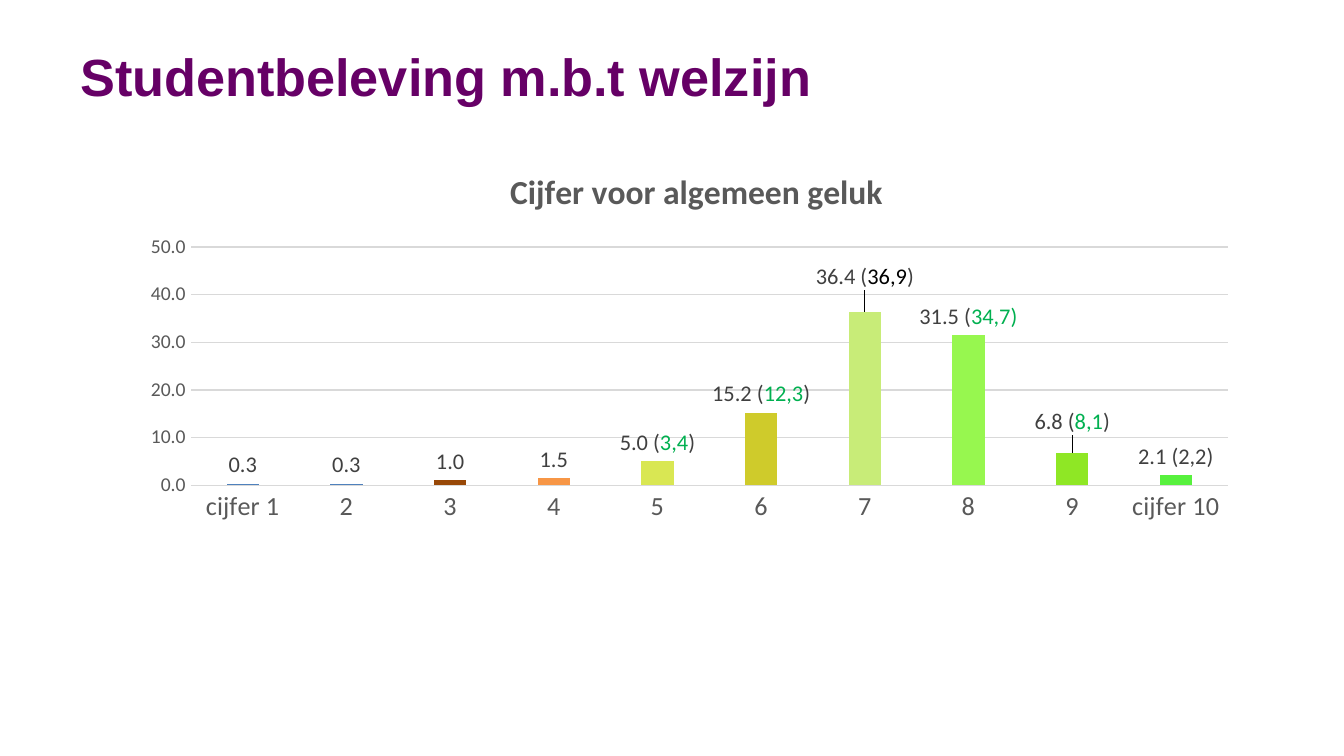
from dataclasses import dataclass
from typing import Any, Optional

from lxml import etree
from pptx import Presentation
from pptx import util as u
from pptx.chart import data as chart_data
from pptx.dml.color import RGBColor
from pptx.enum import chart as charts, text
from pptx.oxml.ns import qn


@dataclass(frozen=True)
class Theme:
    heading_font: str = "Arial"
    chart_font: str = "Calibri"
    purple: str = "660066"
    grey: str = "595959"
    dark: str = "404040"
    black: str = "000000"
    green: str = "00B050"
    grid: str = "D9D9D9"
    bar: str = "4F81BD"
    heading_size: float = 28
    chart_title_size: float = 18
    category_size: float = 14
    label_size: float = 12
    scale_size: float = 10.5
    base_size: float = 10


@dataclass(frozen=True)
class Grade:
    name: str
    share: float
    color: Optional[str] = None
    label: tuple[tuple[str, str], ...] = ()  # runs of (wording, colour)
    lift: float = 0  # upward shift as a fraction of the chart height


THEME = Theme()
DARK, GREEN = THEME.dark, THEME.green

GRADES = [
    Grade("cijfer 1", 0.3),
    Grade("2", 0.3),
    Grade("3", 1.0, "984807"),
    Grade("4", 1.5, "F79646"),
    Grade("5", 5.0, "D9E753", (("5.0 (", DARK), ("3,4", GREEN), (")", DARK))),
    Grade("6", 15.2, "CFCB2B", (("15.2 (", DARK), ("12,3", GREEN), (")", DARK))),
    Grade("7", 36.4, "C8EC78",
          (("36.4 (", DARK), ("36,9", THEME.black), (")", DARK)), 0.04),
    Grade("8", 31.5, "97F74F", (("31.5 (", DARK), ("34,7)", GREEN))),
    Grade("9", 6.8, "8FE725",
          (("6.8 (", DARK), ("8,1", GREEN), (")", DARK)), 0.03),
    Grade("cijfer 10", 2.1, "57F13D", (("2.1 (2,2)", DARK),)),
]


def apply(target: Any, values: dict[str, Any]) -> None:
    for name, value in values.items():
        setattr(target, name, value)


def style_font(font: Any, size: float, color: str,
               name: str = THEME.chart_font, bold: bool = False) -> None:
    apply(font, {"name": name, "size": u.Pt(size), "bold": bold})
    font.color.rgb = RGBColor.from_string(color)


def paint(fill: Any, color: str) -> None:
    fill.solid()
    fill.fore_color.rgb = RGBColor.from_string(color)


def draw_line(line: Any) -> None:
    line.width = u.Pt(0.75)
    paint(line.fill, THEME.grid)


def set_layout(parent: Any, index: int, values: dict[str, Any]) -> None:
    """Give a chart part a manual layout at its place in the XML order."""
    for old in parent.findall(qn("c:layout")):
        parent.remove(old)
    layout = etree.Element(qn("c:layout"))
    manual = etree.SubElement(layout, qn("c:manualLayout"))
    for name, value in values.items():
        etree.SubElement(manual, qn(f"c:{name}")).set("val", str(value))
    parent.insert(index, layout)


def add_heading(slide: Any, wording: str) -> None:
    box = slide.shapes.add_textbox(u.Pt(36), u.Pt(6.5), u.Pt(648), u.Pt(67.7))
    frame = box.text_frame
    apply(frame, {"word_wrap": True, "vertical_anchor": text.MSO_ANCHOR.MIDDLE})
    run = frame.paragraphs[0].add_run()
    run.text = wording
    style_font(run.font, THEME.heading_size, THEME.purple,
               THEME.heading_font, True)


def style_axes(chart: Any) -> None:
    no_tick = charts.XL_TICK_MARK.NONE
    ticks = {"major_tick_mark": no_tick, "minor_tick_mark": no_tick}
    grades, shares = chart.category_axis, chart.value_axis
    apply(grades, ticks | {"has_major_gridlines": False})
    apply(shares, ticks | {"minimum_scale": 0, "maximum_scale": 50,
                           "major_unit": 10, "has_major_gridlines": True})
    style_font(grades.tick_labels.font, THEME.category_size, THEME.grey)
    style_font(shares.tick_labels.font, THEME.scale_size, THEME.grey)
    apply(shares.tick_labels,
          {"number_format": "0.0", "number_format_is_linked": False})
    draw_line(grades.format.line)
    draw_line(shares.major_gridlines.format.line)
    shares.format.line.fill.background()


def style_grade(chart: Any, index: int, grade: Grade) -> None:
    point = chart.plots[0].series[0].points[index]
    if grade.color:
        paint(point.format.fill, grade.color)
    if not grade.label:
        return
    paragraph = point.data_label.text_frame.paragraphs[0]
    for wording, color in grade.label:
        run = paragraph.add_run()
        run.text = wording
        style_font(run.font, THEME.label_size, color)
    point.data_label.position = charts.XL_LABEL_POSITION.OUTSIDE_END
    if grade.lift:
        label = chart.element.xpath(f".//c:dLbl[c:idx/@val='{index}']")[0]
        set_layout(label, 1, {"x": 0, "y": -grade.lift})


def add_happiness_chart(slide: Any, grades: list[Grade]) -> None:
    shares = chart_data.CategoryChartData(number_format="0.0")
    shares.categories = [grade.name for grade in grades]
    shares.add_series("Series 1", [grade.share for grade in grades])
    chart = slide.shapes.add_chart(
        charts.XL_CHART_TYPE.COLUMN_CLUSTERED,
        u.Pt(63.4), u.Pt(76.3), u.Pt(607.7), u.Pt(214.6), shares).chart
    chart.has_legend = False
    style_font(chart.font, THEME.base_size, THEME.black)

    # Chart title
    chart.has_title = True
    run = chart.chart_title.text_frame.paragraphs[0].add_run()
    run.text = "Cijfer voor algemeen geluk"
    style_font(run.font, THEME.chart_title_size, THEME.grey, bold=True)
    set_layout(chart.element.xpath("c:chart/c:title")[0], 1,
               {"xMode": "edge", "yMode": "edge", "x": 0.34, "y": 0.05})

    # Plot area and axes
    set_layout(chart.element.xpath("c:chart/c:plotArea")[0], 0,
               {"layoutTarget": "inner", "xMode": "edge", "yMode": "edge",
                "x": 0.064, "y": 0.261, "w": 0.914, "h": 0.595})
    style_axes(chart)

    # Bars and labels
    plot = chart.plots[0]
    apply(plot, {"gap_width": 219, "overlap": -27, "vary_by_categories": False})
    bars = plot.series[0]
    paint(bars.format.fill, THEME.bar)
    apply(bars.data_labels, {
        "show_value": True, "number_format": "0.0",
        "number_format_is_linked": False,
        "position": charts.XL_LABEL_POSITION.OUTSIDE_END})
    style_font(bars.data_labels.font, THEME.label_size, DARK)
    for index, grade in enumerate(grades):
        style_grade(chart, index, grade)


def main() -> None:
    deck = Presentation()
    apply(deck, {"slide_width": u.Pt(720), "slide_height": u.Pt(405)})
    slide = deck.slides.add_slide(deck.slide_layouts[6])
    add_heading(slide, "Studentbeleving m.b.t welzijn")
    add_happiness_chart(slide, GRADES)
    deck.save("out.pptx")


if __name__ == "__main__":
    main()
